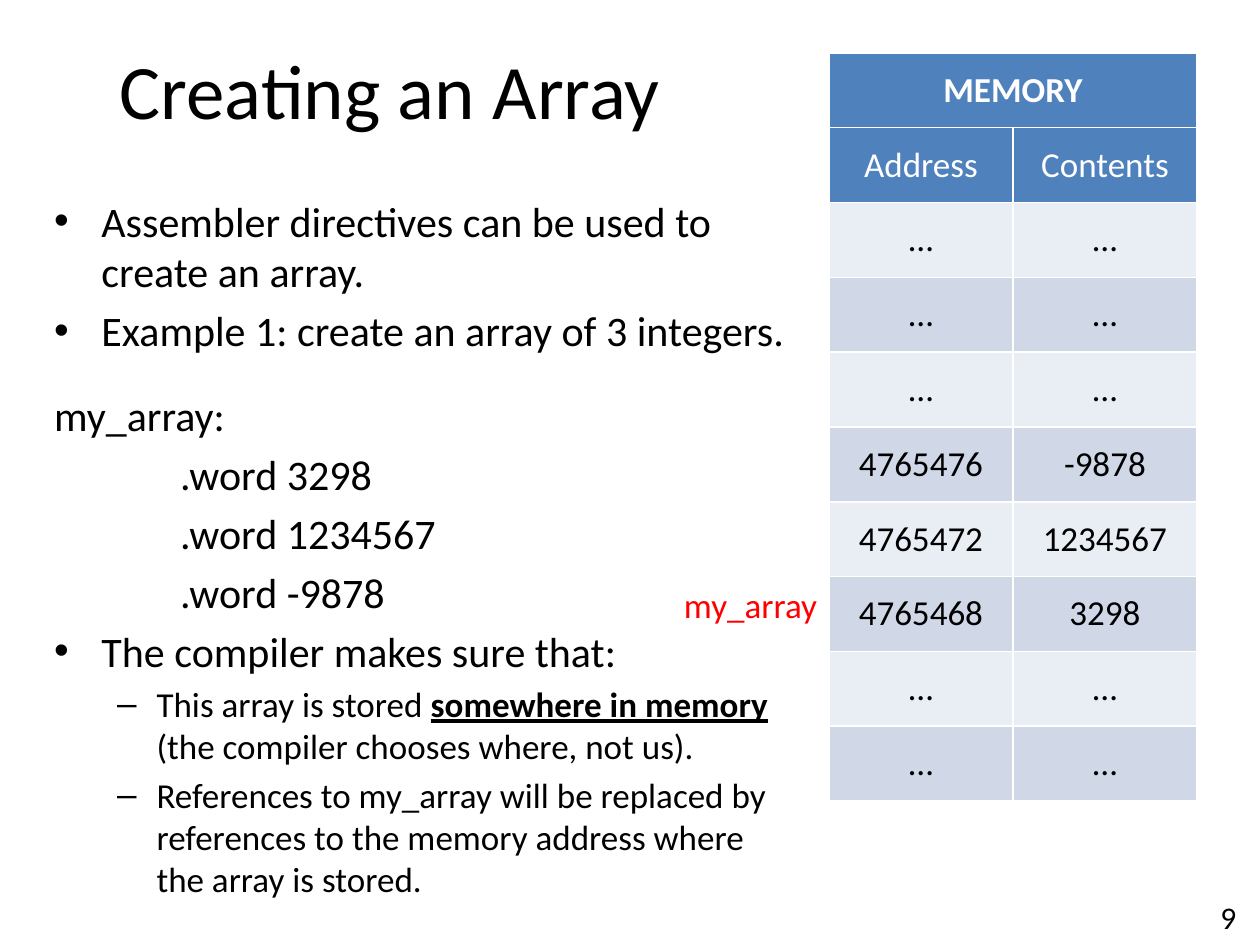
from dataclasses import dataclass

from pptx import Presentation
from pptx.dml.color import RGBColor
from pptx.enum.text import MSO_ANCHOR, MSO_AUTO_SIZE, PP_ALIGN
from pptx.util import Inches, Pt


@dataclass(frozen=True)
class Theme:
    font: str = "Calibri"
    black: str = "000000"
    white: str = "FFFFFF"
    red: str = "FF0000"
    header: str = "4F81BD"
    bands: tuple = ("E9EDF4", "D0D8E8")
    title_size: int = 44
    body_size: int = 24
    small_size: int = 20
    number_size: int = 18


THEME = Theme()

# Content: each body item is (kind, text runs); "*" marks an emphasised run
TITLE = "Creating an Array "
BODY = [
    ("bullet", ["Assembler directives can be used to create an array."]),
    ("bullet", ["Example 1: create an array of 3 integers."]),
    ("label", ["my_array:"]),
    ("code", [".word 3298"]),
    ("code", [".word 1234567"]),
    ("code", [".word -9878"]),
    ("bullet", ["The compiler makes sure that:"]),
    ("dash", ["This array is stored ", "*somewhere in memory",
              " (the compiler chooses where, not us)."]),
    ("dash", ["References to my_array will be replaced by references "
              "to the memory address where the array is stored."]),
]
MEMORY_TITLE = "MEMORY"
MEMORY_COLUMNS = ("Address", "Contents")
MEMORY = [
    ("…", "…"),
    ("…", "…"),
    ("…", "…"),
    ("4765476", "-9878"),
    ("4765472", "1234567"),
    ("4765468", "3298"),
    ("…", "…"),
    ("…", "…"),
]
ARRAY_LABEL = "my_array"
PAGE_NUMBER = "9"
CODE_INDENTS = {"label": 0, "code": 1}


def place(shape, left, top, width, height):
    shape.left, shape.top = Inches(left), Inches(top)
    shape.width, shape.height = Inches(width), Inches(height)


def style_run(run, size, color=THEME.black, bold=None):
    run.font.name = THEME.font
    run.font.size = Pt(size)
    run.font.color.rgb = RGBColor.from_string(color)
    run.font.bold = bold


def remove_bullet(paragraph, left):
    properties = paragraph._p.get_or_add_pPr()
    properties.set("marL", str(Inches(left)))
    properties.set("indent", "0")
    properties.insert_element_before(
        properties.makeelement(
            "{http://schemas.openxmlformats.org/drawingml/2006/main}buNone", {}),
        "a:tabLst", "a:defRPr", "a:extLst")


def add_title(slide):
    title = slide.shapes.title
    place(title, 0.5, 0.08, 5.33, 1.25)
    title.text_frame.text = TITLE
    title.text_frame.auto_size = MSO_AUTO_SIZE.NONE
    style_run(title.text_frame.paragraphs[0].runs[0], THEME.title_size)


def add_body(slide):
    body = slide.placeholders[1]
    place(body, 0.33, 1.5, 6, 5.5)
    frame = body.text_frame
    frame.auto_size = MSO_AUTO_SIZE.NONE
    for index, (kind, texts) in enumerate(BODY):
        paragraph = frame.add_paragraph() if index else frame.paragraphs[0]
        paragraph.level = 1 if kind == "dash" else 0
        if kind == "label":
            paragraph.space_before = Pt(20)
        if kind in CODE_INDENTS:
            remove_bullet(paragraph, CODE_INDENTS[kind])
        size = THEME.small_size if kind == "dash" else THEME.body_size
        for text in texts:
            run = paragraph.add_run()
            run.text = text.removeprefix("*")
            style_run(run, size)
            if text.startswith("*"):
                run.font.bold = run.font.underline = True


def fill_cell(cell, text, fill, color, bold=False):
    cell.fill.solid()
    cell.fill.fore_color.rgb = RGBColor.from_string(fill)
    cell.vertical_anchor = MSO_ANCHOR.MIDDLE
    cell.text_frame.text = text
    paragraph = cell.text_frame.paragraphs[0]
    paragraph.alignment = PP_ALIGN.CENTER
    style_run(paragraph.runs[0], THEME.small_size, color, bold)


def add_memory_table(slide):
    rows = [MEMORY_COLUMNS, *MEMORY]
    # The default table style draws the white rules
    table = slide.shapes.add_table(
        len(rows) + 1, len(MEMORY_COLUMNS),
        Inches(6.58), Inches(0.42), Inches(2.92), Inches(5.94)).table
    table.cell(0, 0).merge(table.cell(0, 1))
    fill_cell(table.cell(0, 0), MEMORY_TITLE, THEME.header, THEME.white, True)
    for row, values in enumerate(rows, start=1):
        is_header = row == 1
        fill = THEME.header if is_header else THEME.bands[row % 2]
        color = THEME.white if is_header else THEME.black
        for column, value in enumerate(values):
            fill_cell(table.cell(row, column), value, fill, color)


def add_text(slide, box, text, size, color, alignment, wrap):
    shape = slide.shapes.add_textbox(*map(Inches, box))
    shape.text_frame.word_wrap = wrap
    shape.text_frame.text = text
    paragraph = shape.text_frame.paragraphs[0]
    paragraph.alignment = alignment
    style_run(paragraph.runs[0], size, color)


def main():
    presentation = Presentation()
    presentation.slide_width, presentation.slide_height = Inches(10), Inches(7.5)
    slide = presentation.slides.add_slide(presentation.slide_layouts[1])

    add_title(slide)
    add_body(slide)
    # Page number
    add_text(slide, (7.58, 7.08, 2.33, 0.4), PAGE_NUMBER, THEME.number_size,
             THEME.black, PP_ALIGN.RIGHT, True)
    add_memory_table(slide)
    # Label beside the array's first address
    add_text(slide, (5.33, 4.58, 1.27, 0.44), ARRAY_LABEL, THEME.small_size,
             THEME.red, PP_ALIGN.LEFT, False)

    presentation.save("out.pptx")


if __name__ == "__main__":
    main()
